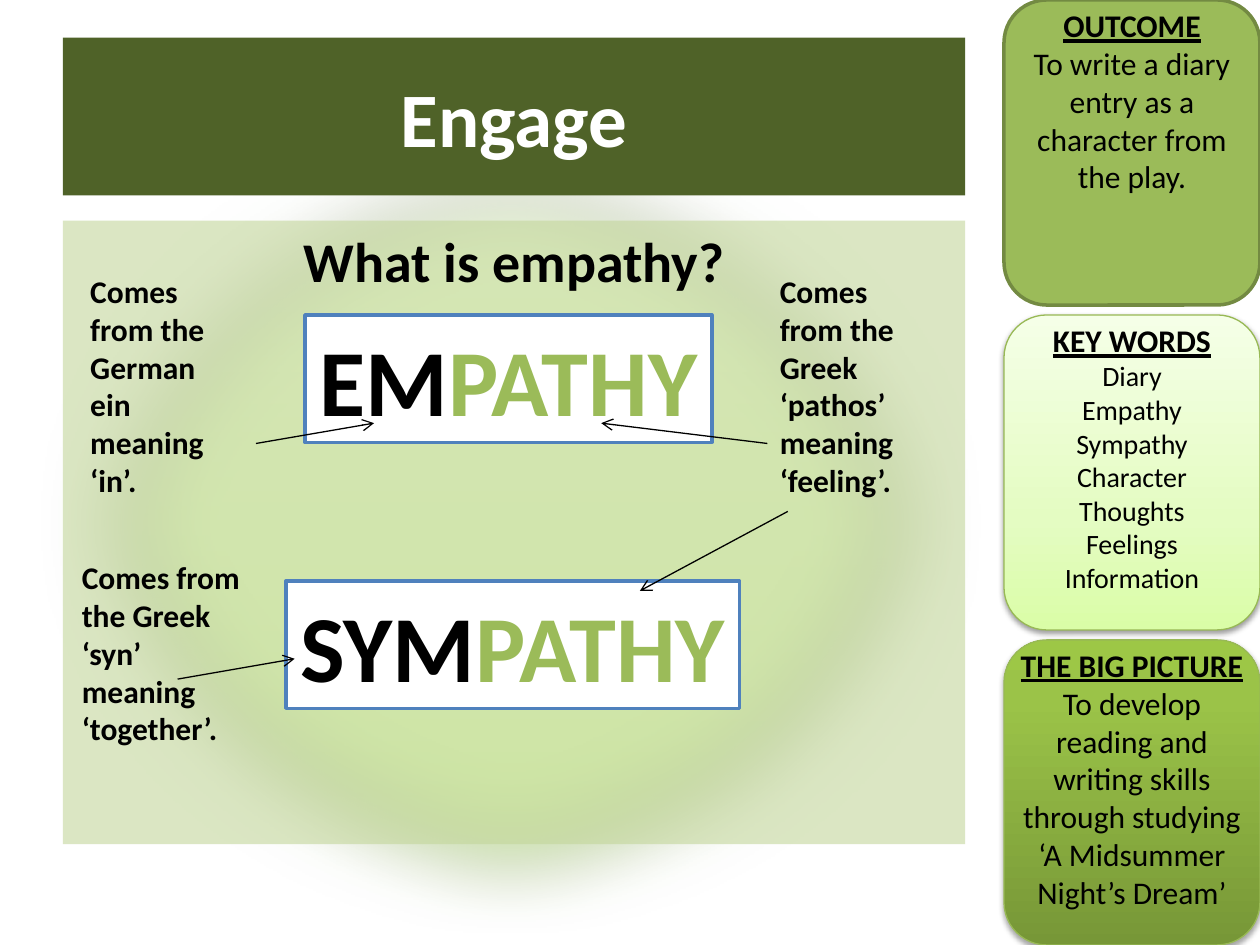
from dataclasses import dataclass

from lxml import etree
from pptx import Presentation
from pptx import util as u
from pptx.dml import color
from pptx.enum import shapes, text
from pptx.oxml import ns


@dataclass(frozen=True)
class Theme:
    font: str = "Calibri"
    black: str = "000000"
    white: str = "FFFFFF"
    banner: str = "4F6228"
    panel: str = "C3D69B"
    green: str = "9BBB59"
    green_line: str = "738A42"
    card_line: str = "98B955"
    box_line: str = "4F81BD"
    glyph_line: str = "FEFEFE"
    pale: tuple = ((0, "DAFDA7"), (35, "E4FCC2"), (100, "F5FFE7"))
    deep: tuple = ((0, "779737"), (80, "9BC348"), (100, "9DC746"))
    title_size: int = 44
    question_size: int = 32
    word_size: int = 54
    body_size: int = 18
    list_size: int = 16


THEME = Theme()
SIDE_LEFT, SIDE_WIDTH = 20.24, 5.16
CARD_GAP = 0.2


def rgb(value):
    return color.RGBColor.from_string(value)


def add_xml(parent, tag, **attributes):
    return etree.SubElement(parent, ns.qn(tag), attributes)


def add_block(slide, kind, box, fill, line=None, line_width=0.75):
    """Add a preset shape; a tuple fill is a list of gradient stops, bottom to top."""
    shape = slide.shapes.add_shape(kind, *map(u.Cm, box))
    shape.shadow.inherit = False
    if isinstance(fill, tuple):
        shape.fill.gradient()
        shape.fill.gradient_angle = 90
        stops = shape._element.spPr.find(ns.qn("a:gradFill")).find(ns.qn("a:gsLst"))
        for stop in list(stops):
            stops.remove(stop)
        for position, value in fill:
            stop = add_xml(stops, "a:gs", pos=str(position * 1000))
            add_xml(stop, "a:srgbClr", val=value)
    else:
        shape.fill.solid()
        shape.fill.fore_color.rgb = rgb(fill)
    if line:
        shape.line.color.rgb = rgb(line)
        shape.line.width = u.Pt(line_width)
    else:
        shape.line.fill.background()
    return shape


def add_shadow(shape, opacity, distance=1.6):
    effects = shape._element.spPr.find(ns.qn("a:effectLst"))
    shadow = add_xml(effects, "a:outerShdw", blurRad=str(u.Pt(3.1)),
                     dist=str(u.Pt(distance)), dir="5400000", rotWithShape="0")
    value = add_xml(shadow, "a:srgbClr", val=THEME.black)
    add_xml(value, "a:alpha", val=str(opacity * 1000))
    return effects


def style(font, size, value=THEME.black, bold=True):
    font.name = THEME.font
    font.size = u.Pt(size)
    font.bold = bold
    font.color.rgb = rgb(value)


def write_heading(shape, words, size, value, anchor):
    frame = shape.text_frame
    frame.word_wrap = True
    frame.vertical_anchor = anchor
    paragraph = frame.paragraphs[0]
    paragraph.text = words
    paragraph.alignment = text.PP_ALIGN.CENTER
    style(paragraph.font, size, value)


def add_glow(slide):
    ellipse = add_block(slide, shapes.MSO_SHAPE.OVAL, (0.58, 1.98, 19.46, 17.07), THEME.pale)
    effects = add_shadow(ellipse, 38)
    add_xml(effects, "a:softEdge", rad=str(u.Pt(50)))


def add_panel(slide):
    panel = add_block(slide, shapes.MSO_SHAPE.RECTANGLE, (1.27, 4.45, 18.19, 12.57), THEME.panel)
    value = panel._element.spPr.find(ns.qn("a:solidFill"))[0]
    add_xml(value, "a:alpha", val="60000")
    write_heading(panel, "What is empathy?", THEME.question_size, THEME.black,
                  text.MSO_ANCHOR.TOP)


def add_word_box(slide, prefix, left, top, width):
    """Frame a word whose root PATHY is set in green."""
    box = add_block(slide, shapes.MSO_SHAPE.RECTANGLE, (left, top, width, 2.57),
                    THEME.white, THEME.box_line, 2)
    box.text_frame.word_wrap = False
    paragraph = box.text_frame.paragraphs[0]
    paragraph.alignment = text.PP_ALIGN.CENTER
    for part, value in ((prefix, THEME.black), ("PATHY", THEME.green)):
        run = paragraph.add_run()
        run.text = part
        style(run.font, THEME.word_size, value)
        properties = run._r.get_or_add_rPr()
        outline = etree.Element(ns.qn("a:ln"), w=str(u.Pt(1.5)))
        add_xml(add_xml(outline, "a:solidFill"), "a:srgbClr", val=THEME.glyph_line)
        properties.insert(0, outline)


def add_arrow(slide, start, end):
    arrow = slide.shapes.add_connector(shapes.MSO_CONNECTOR.STRAIGHT,
                                       *map(u.Cm, start + end))
    arrow.line.color.rgb = rgb(THEME.black)
    arrow.line.width = u.Pt(0.75)
    properties = arrow._element.spPr
    add_xml(properties.find(ns.qn("a:ln")), "a:tailEnd", type="arrow")
    add_xml(properties, "a:effectLst")


def add_note(slide, words, box):
    frame = slide.shapes.add_textbox(*map(u.Cm, box)).text_frame
    frame.word_wrap = True
    frame.paragraphs[0].text = words
    style(frame.paragraphs[0].font, THEME.body_size)


def add_card_text(slide, top, height, heading, lines, size):
    box = (SIDE_LEFT, top, SIDE_WIDTH, height)
    frame = slide.shapes.add_textbox(*map(u.Cm, box)).text_frame
    frame.word_wrap = True
    for index, words in enumerate([heading, *lines]):
        paragraph = frame.add_paragraph() if index else frame.paragraphs[0]
        paragraph.text = words
        paragraph.alignment = text.PP_ALIGN.CENTER
        style(paragraph.font, size if index else THEME.body_size, bold=index == 0)
        paragraph.font.underline = index == 0


def add_sidebar(slide):
    cards = (
        (6.15, THEME.green, THEME.green_line, 2, None, "OUTCOME",
         ["To write a diary entry as a character from the play."], THEME.body_size),
        (6.35, THEME.pale, THEME.card_line, 0.75, (38, 1.6), "KEY WORDS",
         ["Diary", "Empathy", "Sympathy", "Character", "Thoughts", "Feelings",
          "Information"], THEME.list_size),
        (6.15, THEME.deep, THEME.card_line, 0.75, (35, 1.8), "THE BIG PICTURE",
         ["To develop reading and writing skills through studying "
          "‘A Midsummer Night’s Dream’"], THEME.body_size),
    )
    top = 0
    for height, fill, line, line_width, shadow, heading, lines, size in cards:
        card = add_block(slide, shapes.MSO_SHAPE.ROUNDED_RECTANGLE,
                         (SIDE_LEFT, top, SIDE_WIDTH, height), fill, line, line_width)
        if shadow:
            add_shadow(card, *shadow)
        add_card_text(slide, top, height, heading, lines, size)
        top += height + CARD_GAP


def main():
    presentation = Presentation()
    presentation.slide_width, presentation.slide_height = u.Cm(25.4), u.Cm(19.05)
    slide = presentation.slides.add_slide(presentation.slide_layouts[6])

    add_glow(slide)
    banner = add_block(slide, shapes.MSO_SHAPE.RECTANGLE, (1.27, 0.76, 18.19, 3.18), THEME.banner)
    write_heading(banner, "Engage", THEME.title_size, THEME.white, text.MSO_ANCHOR.MIDDLE)
    add_panel(slide)

    add_word_box(slide, "EM", 6.15, 6.35, 8.2)
    add_word_box(slide, "SYM", 5.77, 11.71, 9.14)

    add_note(slide, "Comes from the German ein meaning ‘in’.", (1.57, 5.36, 2.97, 4.88))
    add_note(slide, "Comes from the Greek ‘pathos’ meaning ‘feeling’.",
             (15.47, 5.36, 2.97, 4.88))
    add_note(slide, "Comes from the Greek ‘syn’ meaning ‘together’.",
             (1.4, 11.13, 3.76, 4.11))

    add_arrow(slide, (5.16, 8.94), (7.54, 8.53))
    add_arrow(slide, (15.47, 8.94), (12.12, 8.53))
    add_arrow(slide, (15.88, 10.31), (12.9, 11.91))
    add_arrow(slide, (3.58, 13.69), (5.94, 13.28))

    add_sidebar(slide)
    presentation.save("out.pptx")


if __name__ == "__main__":
    main()
